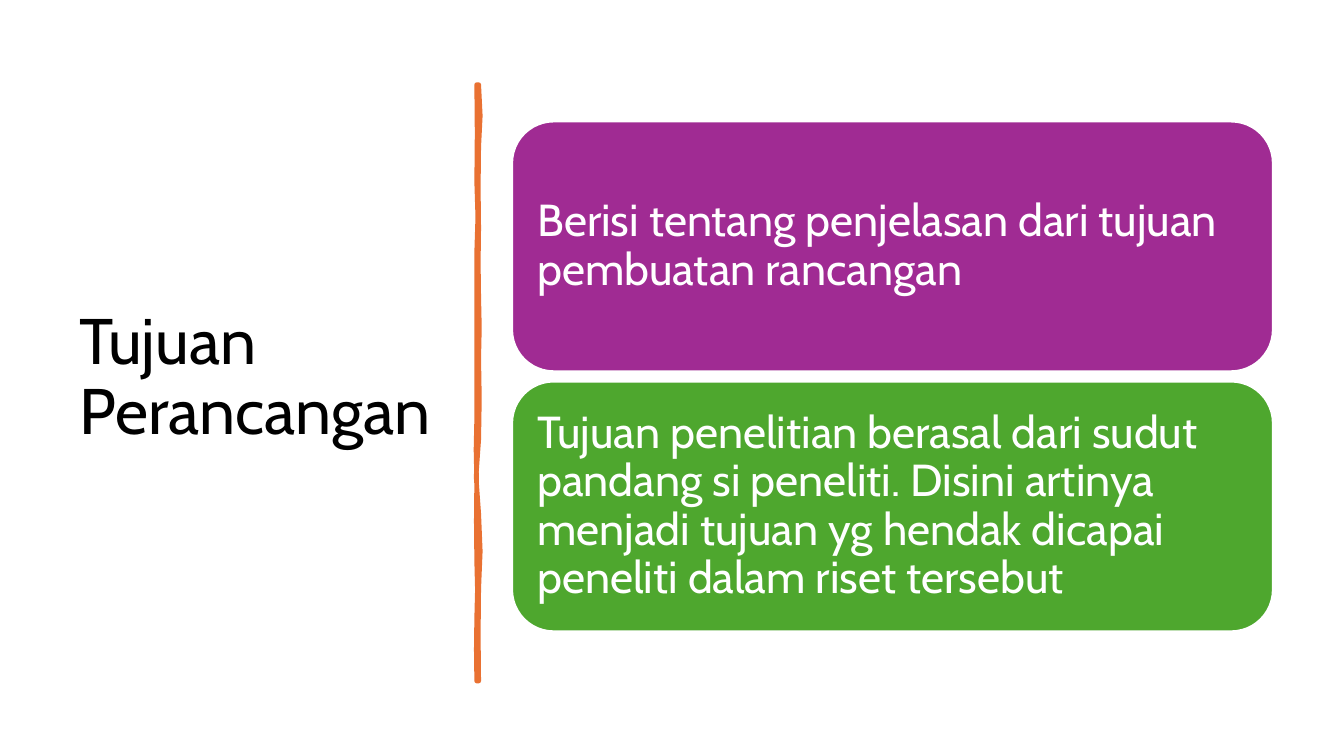
from pptx import Presentation
from pptx.dml.color import RGBColor as Rgb
from pptx.enum.shapes import MSO_SHAPE as Kind
from pptx.enum.text import MSO_ANCHOR as Anchor, PP_ALIGN as Align
from pptx.util import Pt

FONT = "Cabin"
TITLE = "Tujuan Perancangan"
CARDS = [
    ("Berisi tentang penjelasan dari tujuan pembuatan rancangan", "A02B93"),
    ("Tujuan penelitian berasal dari sudut pandang si peneliti. Disini artinya "
     "menjadi tujuan yg hendak dicapai peneliti dalam riset tersebut", "4EA72E"),
]
LEFT, TOP, WIDE, HIGH, PITCH = 365.75, 86.75, 543.5, 178.5, 185.75
EDGES = [
    (342, [60.5, 105, 163, 212, 256, 314, 367, 420.5, 486.5],
     [1.1, -0.3, -0.3, 0.5, 0.5, -1.9, 1.1, -0.3]),
    (340.5, [486.5, 441.5, 401, 343.5, 299, 241, 180, 130, 60.5],
     [-0.3, 0.5, -0.3, -0.5, 0, 0, 0.8, 0.3]),
]


def paint(part, color):
    part.solid()
    part.fore_color.rgb = Rgb.from_string(color)


def write(shape, text, size, color, pad_x, pad_y):
    frame = shape.text_frame
    style = dict(word_wrap=True, vertical_anchor=Anchor.MIDDLE,
                 margin_left=Pt(pad_x), margin_right=Pt(pad_x),
                 margin_top=Pt(pad_y), margin_bottom=Pt(pad_y))
    for name, value in style.items():
        setattr(frame, name, value)
    para = frame.paragraphs[0]
    para.text = text
    para.alignment = Align.LEFT
    para.line_spacing = 0.9
    para.font.name = FONT
    para.font.size = Pt(size)
    para.font.color.rgb = Rgb.from_string(color)


def coat(shape, fill, line, width):
    shape.shadow.inherit = False
    paint(shape.fill, fill)
    paint(shape.line.fill, line)
    shape.line.width = Pt(width)


def trace():
    dots = []
    for x, stops, waves in EDGES:
        dots.append((x, stops[0]))
        for start, end, wave in zip(stops, stops[1:], waves):
            dots += [(x + wave, (start + end) / 2), (x, end)]
    return [(Pt(x), Pt(y)) for x, y in dots]


deck = Presentation()
deck.slide_width, deck.slide_height = Pt(960), Pt(540)
slide = deck.slides.add_slide(deck.slide_layouts[6])
shapes = slide.shapes

title = shapes.add_textbox(Pt(49.75), Pt(50.5), Pt(269.25), Pt(440))
write(title, TITLE, 46, "000000", 7.2, 3.6)

dots = trace()
pen = shapes.build_freeform(*dots[0])
pen.add_line_segments(dots[1:], close=True)
coat(pen.convert_to_shape(), "E97132", "E97132", 3.25)

for row, (text, color) in enumerate(CARDS):
    card = shapes.add_shape(Kind.ROUNDED_RECTANGLE, Pt(LEFT),
                            Pt(TOP + row * PITCH), Pt(WIDE), Pt(HIGH))
    coat(card, color, "FFFFFF", 1.5)
    write(card, text, 32, "FFFFFF", 9.4, 9.4)

deck.save("out.pptx")
